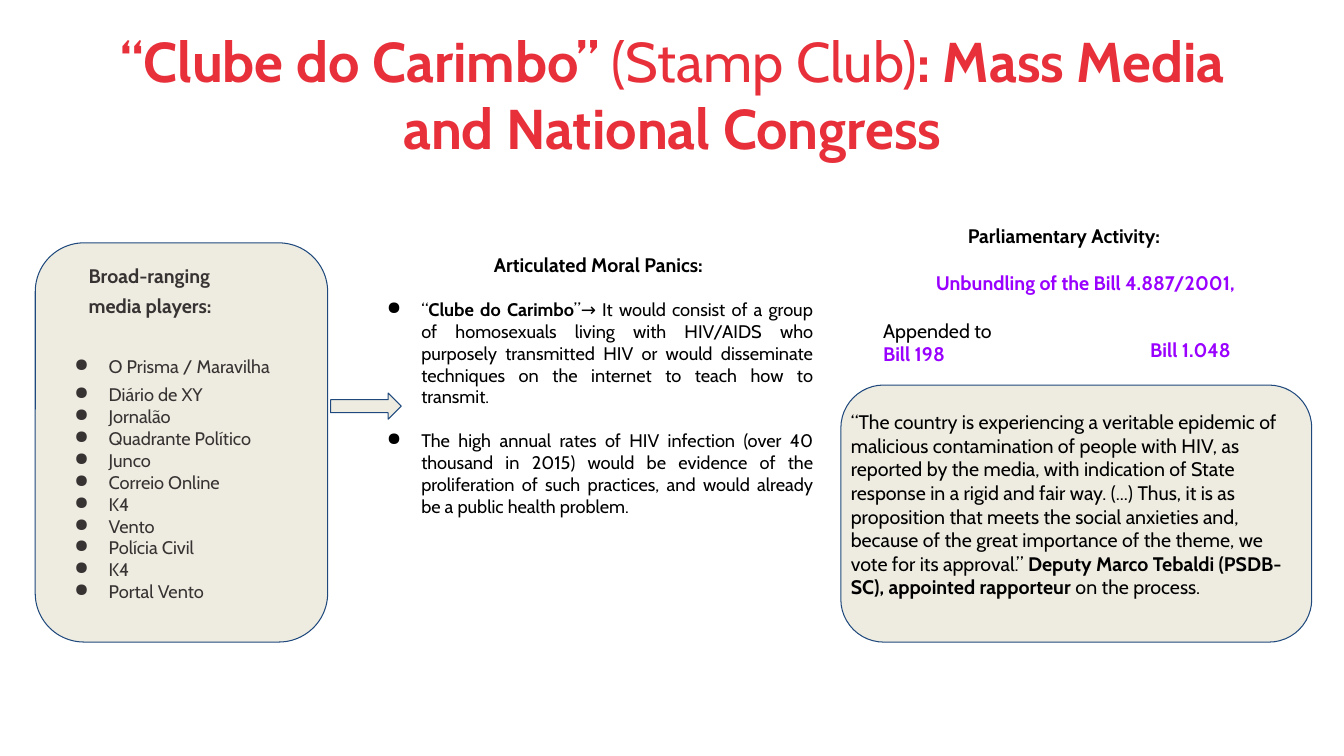
"""Build the slide on the Stamp Club, mass media and National Congress."""
from lxml.etree import SubElement
from pptx import Presentation
from pptx.dml.color import RGBColor
from pptx.enum.shapes import MSO_SHAPE
from pptx.enum.text import MSO_ANCHOR, PP_ALIGN
from pptx.oxml.ns import qn
from pptx.util import Inches, Pt

COLORS = {"red": "E8303B", "black": "000000", "grey": "383333",
          "purple": "9900FF", "beige": "EEECE1", "navy": "1F497D"}

prs = Presentation()
prs.slide_width, prs.slide_height = Inches(13.33), Inches(7.5)
s = prs.slides.add_slide(prs.slide_layouts[6])


def add_panel(kind, box):
    """Add a beige shape with a thin navy outline."""
    sp = s.shapes.add_shape(kind, *map(Inches, box))
    sp.shadow.inherit = False
    sp.fill.solid()
    sp.fill.fore_color.rgb = RGBColor.from_string(COLORS["beige"])
    sp.line.color.rgb = RGBColor.from_string(COLORS["navy"])
    sp.line.width = Pt(0.75)


def add_text(box, paragraphs, size=14, color="black", inset=0.1):
    """Add a text box from (runs, format) pairs; a run is (text, bold)."""
    tf = s.shapes.add_textbox(*map(Inches, box)).text_frame
    tf.word_wrap = True
    tf.margin_top = tf.margin_bottom = Inches(inset)
    for i, (runs, fmt) in enumerate(paragraphs):
        p = tf.paragraphs[0] if i == 0 else tf.add_paragraph()
        tint = COLORS[fmt.get("color", color)]
        pPr = p._p.get_or_add_pPr()
        pPr.set("marL", str(Inches(fmt.get("left", 0))))
        if fmt.get("bullet"):
            pPr.set("marL", str(Inches(0.5)))
            pPr.set("indent", str(Inches(-0.34)))
            SubElement(SubElement(pPr, qn("a:buClr")), qn("a:srgbClr"), val=tint)
            SubElement(pPr, qn("a:buChar"), char="●")
        p.alignment = fmt.get("align", PP_ALIGN.LEFT)
        p.space_before = Pt(fmt.get("before", 0))
        for text, bold in runs:
            r = p.add_run()
            r.text = text
            font = {"name": "Cabin", "size": Pt(fmt.get("size", size)), "bold": bold}
            for name, value in font.items():
                setattr(r.font, name, value)
            r.font.color.rgb = RGBColor.from_string(tint)
    return tf


title = add_text((0.67, 0.3, 12, 1.25), [
    ([("“Clube do Carimbo” ", True), ("(Stamp Club)", False),
      (": Mass Media and National Congress", True)], {"align": PP_ALIGN.CENTER}),
], size=40, color="red", inset=0.05)
title.vertical_anchor = MSO_ANCHOR.MIDDLE

point = {"bullet": True, "align": PP_ALIGN.JUSTIFY, "size": 13, "before": 15.6}
add_text((3.58, 2.41, 4.58, 3.96), [
    ([("Articulated Moral Panics:", True)], {"left": 1.22}),
    ([("“", False), ("Clube do Carimbo", True),
      ("”→ It would consist of a group of homosexuals living with HIV/AIDS who "
       "purposely transmitted HIV or would disseminate techniques on the internet "
       "to teach how to transmit.", False)], point),
    ([("The high annual rates of HIV infection (over 40 thousand in 2015) would be "
       "evidence of the proliferation of such practices, and would already be a "
       "public health problem.", False)], point),
])

add_panel(MSO_SHAPE.ROUNDED_RECTANGLE, (0.35, 2.41, 2.9, 3.96))
players = ["O Prisma / Maravilha", "Diário de XY", "Jornalão", "Quadrante Político",
           "Junco", "Correio Online", "K4", "Vento", "Polícia Civil", "K4",
           "Portal Vento"]
gaps = {0: 26.6, 1: 4.8}
add_text((0.48, 2.52, 2.9, 4.02), [
    ([("Broad-ranging", True)], {"left": 0.3}),
    ([("media players:", True)], {"left": 0.3, "before": 4.8}),
] + [([(player, False)], {"bullet": True, "size": 13, "before": gaps.get(i, 0)})
     for i, player in enumerate(players)], color="grey")

add_panel(MSO_SHAPE.RIGHT_ARROW, (3.28, 3.9, 0.7, 0.26))

add_text((8.66, 2.12, 4.21, 4.54), [
    ([("Parliamentary Activity:", True)], {"left": 0.84}),
    ([("Unbundling of the Bill 4.887/2001,", True)],
     {"align": PP_ALIGN.CENTER, "color": "purple", "before": 17}),
    ([("Appended to", False)], {"before": 17}),
    ([("Bill 198", True)], {"color": "purple"}),
])
add_text((11.31, 3.25, 1.89, 3.61), [([("Bill 1.048", True)], {})], color="purple")

add_panel(MSO_SHAPE.ROUNDED_RECTANGLE, (8.34, 3.82, 4.67, 2.55))
add_text((8.34, 3.97, 4.67, 2.12), [
    ([("“The country is experiencing a veritable epidemic of malicious contamination "
       "of people with HIV, as reported by the media, with indication of State "
       "response in a rigid and fair way. (...) Thus, it is as proposition that meets "
       "the social anxieties and, because of the great importance of the theme, we "
       "vote for its approval.” ", False),
      ("Deputy Marco Tebaldi (PSDB-SC), appointed rapporteur", True),
      (" on the process.", False)], {}),
])

prs.save("out.pptx")
